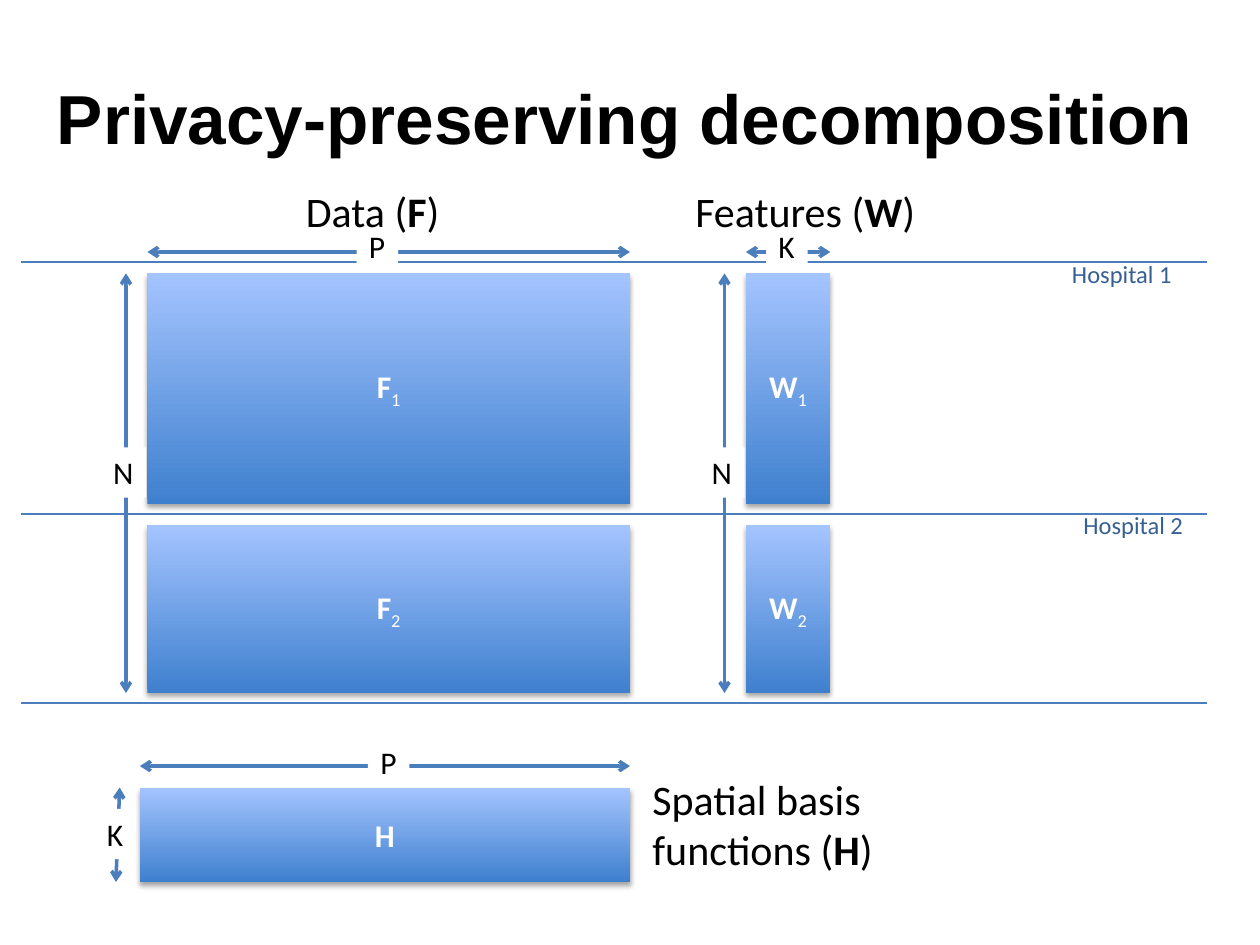
import pptx
import pptx.util
import pptx.dml.color
import pptx.enum.shapes
import pptx.enum.text
import pptx.oxml
import pptx.oxml.ns

Inches, Pt = pptx.util.Inches, pptx.util.Pt
ALIGN = pptx.enum.text.PP_ALIGN
ANCHOR = pptx.enum.text.MSO_ANCHOR
COLORS = {"text": "000000", "white": "FFFFFF", "line": "4B7EBC",
          "hospital": "376092", "dark": "3F80CE", "light": "A4C4FF"}
GAP = 0.17  # between a matrix and its dimension arrows
LABEL_H = 0.4
BODY = {"size": Pt(18), "name": "Calibri"}
HEADING = {"size": Pt(24), "name": "Calibri"}
SMALL = {"size": Pt(14), "name": "Calibri"}
TITLE = {"size": Pt(39.6), "name": "Arial"}


def rgb(key):
    return pptx.dml.color.RGBColor.from_string(COLORS[key])


def sub(parent, tag, **attrs):
    el = parent.makeelement(pptx.oxml.ns.qn(tag), attrs)
    parent.append(el)
    return el


def write(sp, runs, font, color="text", align=ALIGN.LEFT, anchor=ANCHOR.TOP, wrap=True):
    """Fill sp with runs of (text, bold, subscript)."""
    tf = sp.text_frame
    tf.word_wrap, tf.vertical_anchor = wrap, anchor
    p = tf.paragraphs[0]
    p.alignment = align
    for text, bold, subscript in runs:
        r = p.add_run()
        r.text = text
        for name, value in font.items():
            setattr(r.font, name, value)
        r.font.bold = bold
        r.font.color.rgb = rgb(color)
        if subscript:
            r.font._element.set("baseline", "-25000")


def text_box(s, left, top, width, height, runs, font, **options):
    sp = s.shapes.add_textbox(Inches(left), Inches(top), Inches(width), Inches(height))
    write(sp, runs, font, **options)
    return sp


def heading_runs(words, symbol):
    return [(words + " (", False, False), (symbol, True, False), (")", False, False)]


def line(s, x1, y1, x2, y2, width=0.75, arrows=False):
    c = s.shapes.add_connector(pptx.enum.shapes.MSO_CONNECTOR.STRAIGHT,
                               Inches(x1), Inches(y1), Inches(x2), Inches(y2))
    c.line.color.rgb = rgb("line")
    c.line.width = Pt(width)
    if arrows:
        ln = c.line._get_or_add_ln()
        for end in ("a:headEnd", "a:tailEnd"):
            sub(ln, end, type="arrow")
    sub(c._element.spPr, "a:effectLst")


def dimension(s, start, end, name, label_left, label_top, label_width=0.33):
    """Double arrow with its letter on a white patch."""
    line(s, *start, *end, width=2, arrows=True)
    sp = text_box(s, label_left, label_top, label_width, LABEL_H,
                  [(name, False, False)], BODY, wrap=False)
    sp.fill.solid()
    sp.fill.fore_color.rgb = rgb("white")


def matrix(s, left, top, width, height, symbol, index=""):
    sp = s.shapes.add_shape(pptx.enum.shapes.MSO_SHAPE.RECTANGLE, Inches(left),
                            Inches(top), Inches(width), Inches(height))
    sp.line.fill.background()
    sp.fill.gradient()
    sp.fill.gradient_angle = 90
    for stop, key, position in zip(sp.fill.gradient_stops, ("dark", "light"), (0, 1)):
        stop.color.rgb = rgb(key)
        stop.position = position
    sp.shadow.inherit = False
    effects = sp._element.spPr.find(pptx.oxml.ns.qn("a:effectLst"))
    shadow = sub(effects, "a:outerShdw", blurRad=str(Pt(3.1)), dist=str(Pt(1.8)),
                 dir="5400000", rotWithShape="0")
    sub(sub(shadow, "a:srgbClr", val="000000"), "a:alpha", val="35000")
    runs = [(symbol, True, False)]
    if index:
        runs.append((index, False, True))
    write(sp, runs, BODY, color="white", align=ALIGN.CENTER, anchor=ANCHOR.MIDDLE)


def split_matrix(s, left, top, width, symbol, columns, label_left, heading, heading_box):
    """Matrix whose N rows are divided between the two hospitals."""
    upper, lower, gap = 1.83, 1.33, 0.17
    bottom = top + upper + gap + lower
    matrix(s, left, top + upper + gap, width, lower, symbol, "2")
    dimension(s, (left, top - GAP), (left + width, top - GAP), columns,
              label_left, top - 0.42)
    matrix(s, left, top, width, upper, symbol, "1")
    heading_left, heading_width = heading_box
    text_box(s, heading_left, top - 0.75, heading_width, 0.5,
             heading_runs(heading, symbol), HEADING)
    dimension(s, (left - GAP, top), (left - GAP, bottom), "N",
              left - 0.37, top + 1.38, 0.36)


def basis_matrix(s, left, top, width, height):
    right, bottom = left + width, top + height
    dimension(s, (left, top - GAP), (right, top - GAP), "P", left + 1.81, top - 0.4)
    matrix(s, left, top, width, height, "H")
    text_box(s, right + 0.08, top - 0.16, 2.17, 0.91,
             heading_runs("Spatial basis functions", "H"), HEADING)
    dimension(s, (left - 0.16, top), (left - 0.19, bottom), "K", left - 0.36, top + GAP)


def hospital_bands(s, left, right):
    for y in (2.08, 4.08, 5.58):
        line(s, left, y, right, y)
    for name, x, y in (("Hospital 1", 8.41, 2.01), ("Hospital 2", 8.5, 4)):
        text_box(s, x, y, 1, 0.34, [(name, False, False)], SMALL,
                 color="hospital", wrap=False)


def main():
    prs = pptx.Presentation()
    prs.slide_width, prs.slide_height = Inches(10), Inches(7.5)
    s = prs.slides.add_slide(prs.slide_layouts[6])
    text_box(s, 0.25, 0.3, 9.42, 1.25, [("Privacy-preserving decomposition", True, False)],
             TITLE, align=ALIGN.CENTER, anchor=ANCHOR.MIDDLE)
    hospital_bands(s, 0.17, 9.58)
    split_matrix(s, 1.17, 2.17, 3.83, "F", "P", 2.83, "Data", (2.33, 1.5))
    split_matrix(s, 5.92, 2.17, 0.67, "W", "K", 6.08, "Features", (5.42, 1.96))
    basis_matrix(s, 1.11, 6.25, 3.89, 0.75)
    prs.save("out.pptx")


if __name__ == "__main__":
    main()
